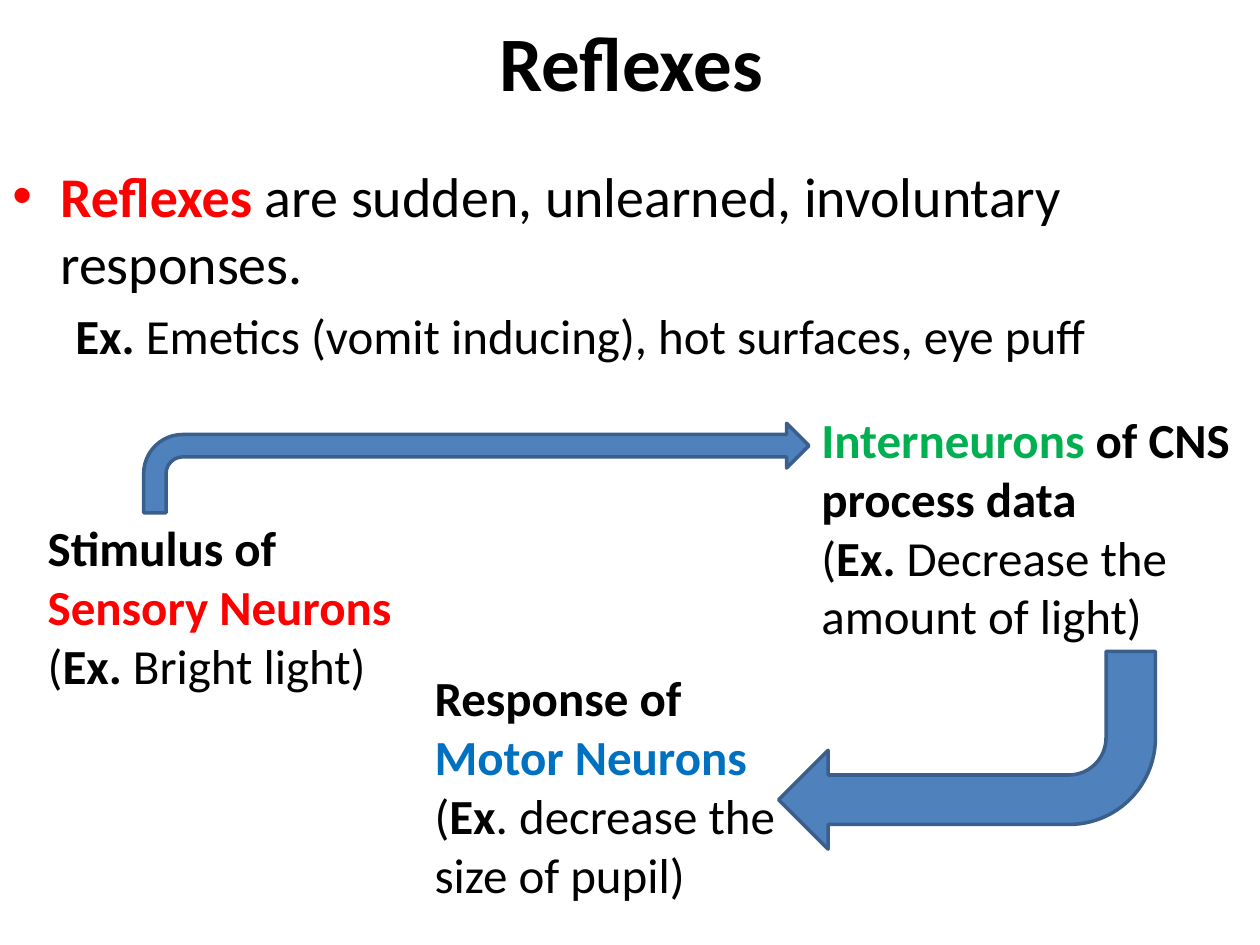
from lxml import etree
from pptx import Presentation, util as u
from pptx.dml.color import RGBColor
from pptx.enum import shapes, text
from pptx.oxml.ns import qn

COLORS = {
    "black": "000000",
    "red": "FF0000",
    "green": "00B050",
    "blue": "0070C0",
    "arrow": "4F81BD",
    "edge": "3A5F8C",
}


class Deck:
    """Style and current slide; boxes are (left, top, width, height) in percent of the slide."""

    font = "Calibri"

    def __init__(self, width, height):
        self.prs = Presentation()
        self.prs.slide_width, self.prs.slide_height = u.Inches(width), u.Inches(height)
        self.s = self.prs.slides.add_slide(self.prs.slide_layouts[6])

    def place(self, box):
        w, h = self.prs.slide_width, self.prs.slide_height
        return [round(share * side / 100) for share, side in zip(box, (w, h, w, h))]

    def text(self, box, *paragraphs, size=28, anchor=text.MSO_ANCHOR.TOP):
        """Each paragraph is a list of (wording, colour, bold) runs."""
        tf = self.s.shapes.add_textbox(*self.place(box)).text_frame
        tf.word_wrap = True
        tf.vertical_anchor = anchor
        for i, runs in enumerate(paragraphs):
            p = tf.paragraphs[0] if i == 0 else tf.add_paragraph()
            for wording, color, bold in runs:
                r = p.add_run()
                r.text = wording
                r.font.name, r.font.size, r.font.bold = self.font, u.Pt(size), bold
                r.font.color.rgb = RGBColor.from_string(COLORS[color])
        return tf

    def title(self, box, wording):
        tf = self.text(box, [(wording, "black", True)], size=44, anchor=text.MSO_ANCHOR.MIDDLE)
        tf.paragraphs[0].alignment = text.PP_ALIGN.CENTER

    def outline(self, box, *levels):
        """Body text: a bulleted first level, then a smaller plain second level."""
        tf = self.text(box, *levels)
        styles = [(32, 0.38, -0.38, "•"), (28, 0.81, -0.31, None)]
        for p, (size, margin, indent, bullet) in zip(tf.paragraphs, styles):
            p.space_before = u.Pt(size * 0.2)
            for r in p.runs:
                r.font.size = u.Pt(size)
            pPr = p._p.get_or_add_pPr()
            pPr.set("marL", str(u.Inches(margin)))
            pPr.set("indent", str(u.Inches(indent)))
            if bullet:
                etree.SubElement(pPr, qn("a:buFont")).set("typeface", "Arial")
                etree.SubElement(pPr, qn("a:buChar")).set("char", bullet)
            else:
                etree.SubElement(pPr, qn("a:buNone"))

    def bent_arrow(self, box, rotation=0):
        sp = self.s.shapes.add_shape(shapes.MSO_SHAPE.BENT_ARROW, *self.place(box))
        sp.rotation = rotation
        sp.shadow.inherit = False
        sp.fill.solid()
        sp.fill.fore_color.rgb = RGBColor.from_string(COLORS["arrow"])
        sp.line.color.rgb = RGBColor.from_string(COLORS["edge"])
        sp.line.width = u.Pt(2)


def example(rest, mark="Ex. "):
    return [("(", "black", False), (mark, "black", True), (rest, "black", False)]


def main():
    deck = Deck(10, 7.5)
    deck.title((5.1, 0, 90, 12.8), "Reflexes")
    deck.outline(
        (0, 16.4, 100, 67.2),
        [("Reflexes", "red", True),
         (" are sudden, unlearned, involuntary responses.", "black", False)],
        [("Ex. ", "black", True),
         ("Emetics (vomit inducing), hot surfaces, eye puff", "black", False)],
    )
    deck.bent_arrow((11.4, 44.8, 52.8, 9.47))
    deck.bent_arrow((61.8, 68.93, 29.9, 20.93), rotation=180)
    deck.text(
        (2.8, 54.13, 33.1, 20.13),
        [("Stimulus of", "black", True)],
        [("Sensory Neurons", "red", True)],
        example("Bright light)"),
    )
    deck.text(
        (64.2, 42.67, 35.8, 26.53),
        [("Interneurons", "green", True), (" of CNS process data", "black", True)],
        example("Decrease the amount of light)"),
    )
    deck.text(
        (33.5, 70, 31.5, 26.53),
        [("Response of ", "black", True), ("Motor Neurons", "blue", True)],
        example(". decrease the size of pupil)", mark="Ex"),
    )
    deck.prs.save("out.pptx")


if __name__ == "__main__":
    main()
